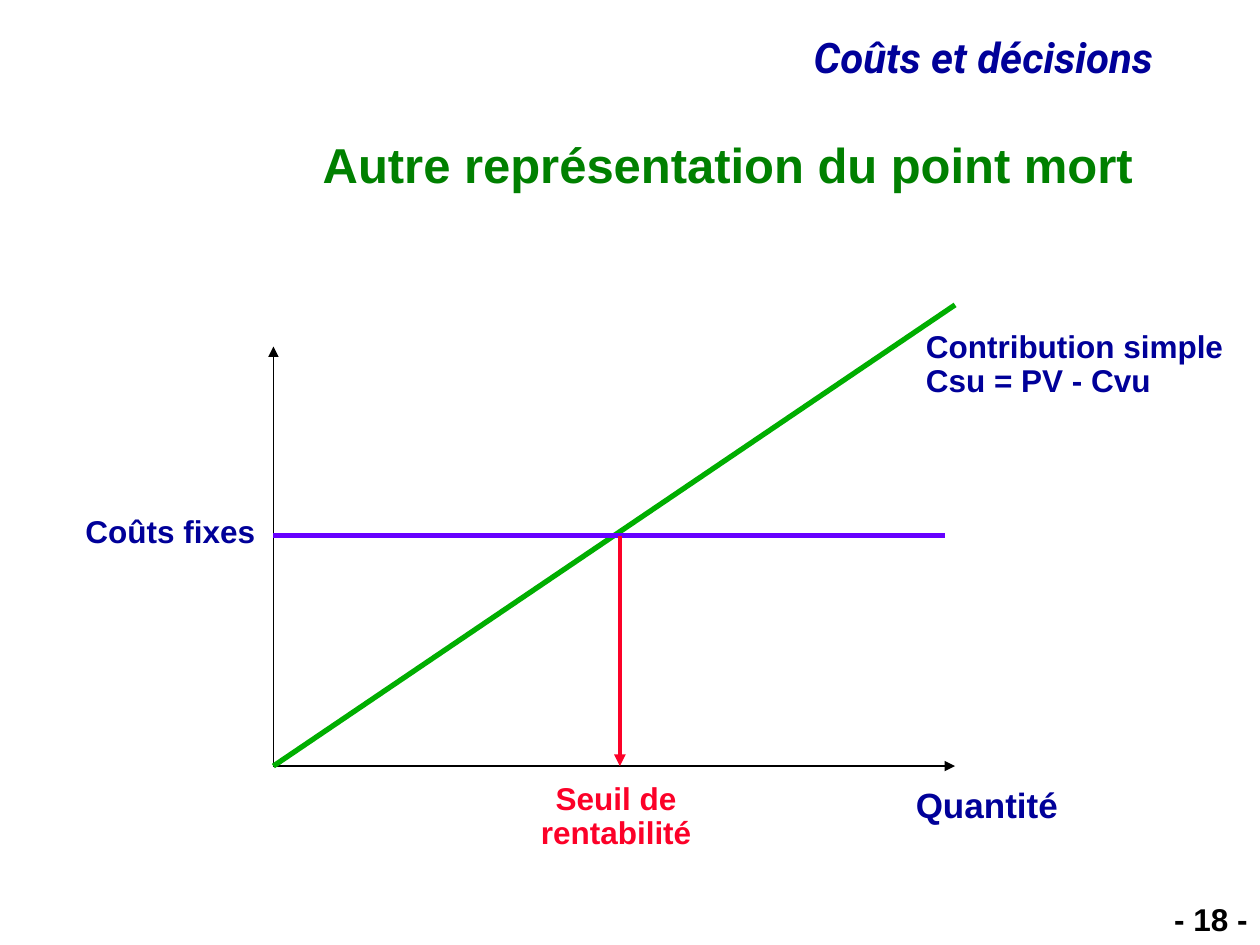
from pptx import Presentation, util as u
from pptx.dml.color import RGBColor
from pptx.enum import shapes, text
from pptx.oxml.ns import qn
from lxml import etree

BLACK = RGBColor(0x00, 0x00, 0x00)
NAVY = RGBColor(0x00, 0x00, 0x99)
TITLE_GREEN = RGBColor(0x00, 0x80, 0x00)
LINE_GREEN = RGBColor(0x00, 0xAE, 0x00)
VIOLET = RGBColor(0x66, 0x00, 0xFF)
RED = RGBColor(0xFC, 0x01, 0x28)
LEFT, CENTER, RIGHT = text.PP_ALIGN.LEFT, text.PP_ALIGN.CENTER, text.PP_ALIGN.RIGHT

prs = Presentation()
prs.slide_width, prs.slide_height = u.Inches(10), u.Inches(7.5)
slide = prs.slides.add_slide(prs.slide_layouts[5])


def write(box, lines, size, color, align=LEFT, font="Arial", italic=False, wrap=True):
    frame = box.text_frame
    frame.text = "\n".join(lines)
    frame.word_wrap = wrap
    for paragraph in frame.paragraphs:
        paragraph.alignment = align
        paragraph.line_spacing = 0.9
        paragraph.font.name = font
        paragraph.font.size = u.Pt(size)
        paragraph.font.bold = True
        paragraph.font.italic = italic
        paragraph.font.color.rgb = color


def draw_line(start, end, color, width, arrow=False):
    line = slide.shapes.add_connector(
        shapes.MSO_CONNECTOR.STRAIGHT, *[u.Inches(v) for v in start + end])
    line.line.color.rgb = color
    line.line.width = u.Pt(width)
    if arrow:
        etree.SubElement(line.line._get_or_add_ln(), qn("a:tailEnd"), type="triangle")
    etree.SubElement(line._element.spPr, qn("a:effectLst"))


# Title
title = slide.shapes.title
title.left, title.top = u.Inches(1.17), u.Inches(1.08)
title.width, title.height = u.Inches(7.92), u.Inches(0.5)
write(title, ["Autre représentation du point mort"], 28, TITLE_GREEN, RIGHT)
title.text_frame.auto_size = text.MSO_AUTO_SIZE.NONE
title.text_frame.vertical_anchor = text.MSO_ANCHOR.MIDDLE

# Break-even diagram: axes, contribution, fixed costs, threshold
origin_x, origin_y = 2.17, 6.08
axis_end = 7.58
fixed_cost_y = 4.25
threshold_x = 4.92
origin = (origin_x, origin_y)
draw_line(origin, (origin_x, 2.75), BLACK, 1, arrow=True)
draw_line(origin, (axis_end, origin_y), BLACK, 1, arrow=True)
draw_line(origin, (axis_end, 2.42), LINE_GREEN, 3)
draw_line((origin_x, fixed_cost_y), (7.5, fixed_cost_y), VIOLET, 3)
draw_line((threshold_x, fixed_cost_y), (threshold_x, origin_y), RED, 2.25, arrow=True)

# Running header, page number and diagram labels
labels = [
    ((1.25, 0.25, 8, 0.46), ["Coûts et décisions"], 24, NAVY,
     dict(align=RIGHT, font="Roboto", italic=True)),
    ((9.09, 7.13, 0.91, 0.37), ["- 18 -"], 18, BLACK, dict(align=RIGHT)),
    ((7.25, 2.58, 2.61, 0.64), ["Contribution simple", "Csu = PV - Cvu"], 18, NAVY, {}),
    ((0.58, 4.05, 1.55, 0.37), ["Coûts fixes"], 18, NAVY, dict(wrap=False)),
    ((4.19, 6.17, 1.4, 0.64), ["Seuil de", "rentabilité"], 18, RED,
     dict(align=CENTER, wrap=False)),
    ((7.17, 6.21, 1.33, 0.4), ["Quantité"], 20, NAVY, dict(wrap=False)),
]
for place, lines, size, color, options in labels:
    label = slide.shapes.add_textbox(*[u.Inches(v) for v in place])
    write(label, lines, size, color, **options)

prs.save("out.pptx")
